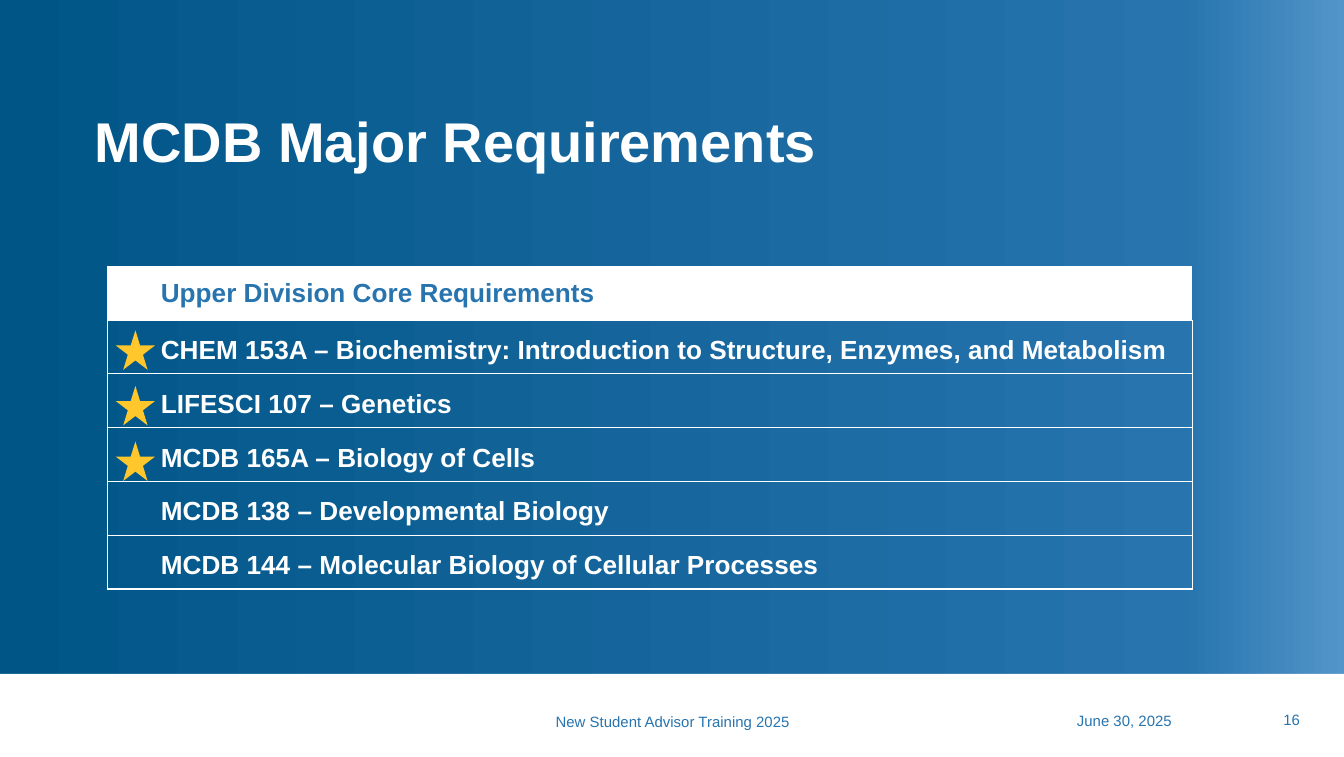
from copy import deepcopy
from dataclasses import dataclass

from lxml.etree import SubElement
from pptx import Presentation
from pptx.dml.color import RGBColor
from pptx.enum.shapes import MSO_SHAPE
from pptx.enum.text import MSO_ANCHOR, PP_ALIGN
from pptx.oxml.ns import qn
from pptx.util import Cm, Pt


@dataclass(frozen=True)
class Theme:
    font: str = "Arial"
    navy: str = "005587"
    blue: str = "2774AE"
    sky: str = "5295C9"
    white: str = "FFFFFF"
    gold: str = "FFC72B"
    title_size: float = 30
    table_size: float = 14
    footer_size: float = 8


def rgb(color):
    return RGBColor.from_string(color)


def write(tf, text, font, size, color, bold=False, align=PP_ALIGN.LEFT,
          line_spacing=None):
    p = tf.paragraphs[0]
    p.alignment = align
    if line_spacing:
        p.line_spacing = line_spacing
    r = p.add_run()
    r.text = text
    r.font.name = font
    r.font.size = Pt(size)
    r.font.bold = bold
    r.font.color.rgb = rgb(color)


def add_border(cell, side, color, width=0.5):
    ln = SubElement(cell._tc.get_or_add_tcPr(), qn(f"a:ln{side}"), w=str(Pt(width)))
    fill = SubElement(ln, qn("a:solidFill"))
    SubElement(fill, qn("a:srgbClr"), val=color)


class SlideBuilder:
    def __init__(self, s, theme):
        self.s = s
        self.theme = theme

    def background(self, stops):
        fill = self.s.background.fill
        fill.gradient()
        fill.gradient_angle = 0
        gs_list = self.s.element.find(f".//{qn('a:gsLst')}")
        while len(gs_list) < len(stops):
            gs_list.append(deepcopy(gs_list[0]))
        for stop, (position, color) in zip(fill.gradient_stops, stops):
            stop.position = position
            stop.color.rgb = rgb(color)

    def shape(self, kind, x, y, w, h, color, outlined=False):
        sp = self.s.shapes.add_shape(kind, Cm(x), Cm(y), Cm(w), Cm(h))
        sp.shadow.inherit = False
        sp.fill.solid()
        sp.fill.fore_color.rgb = rgb(color)
        if outlined:
            sp.line.color.rgb = rgb(color)
            sp.line.width = Pt(1)
            # Sharp corners on the outline
            ln = sp.element.spPr.find(qn("a:ln"))
            SubElement(ln, qn("a:miter"), lim="800000")
        else:
            sp.line.fill.background()

    def text(self, text, x, y, w, h, margins=(0.25, 0.13, 0.25, 0.13),
             anchor=MSO_ANCHOR.TOP, **fmt):
        tf = self.s.shapes.add_textbox(Cm(x), Cm(y), Cm(w), Cm(h)).text_frame
        tf.word_wrap = True
        tf.vertical_anchor = anchor
        (tf.margin_left, tf.margin_top,
         tf.margin_right, tf.margin_bottom) = map(Cm, margins)
        write(tf, text, font=self.theme.font, **fmt)

    def footer(self, text, x, y, w, left=0.25, align=PP_ALIGN.RIGHT):
        self.text(text, x, y, w, 0.38, (left, 0.03, 0.25, 0.03),
                  MSO_ANCHOR.BOTTOM, size=self.theme.footer_size,
                  color=self.theme.blue, align=align)

    def table(self, rows, x, y, w, h):
        t = self.theme
        table = self.s.shapes.add_table(
            len(rows), 1, Cm(x), Cm(y), Cm(w), Cm(h)).table
        table.horz_banding = False
        for i, text in enumerate(rows):
            header, last = i == 0, i == len(rows) - 1
            cell = table.cell(i, 0)
            cell.vertical_anchor = MSO_ANCHOR.MIDDLE
            cell.margin_left = Cm(1.01)
            cell.margin_top = Cm(0 if header else 0.13)
            cell.margin_right = cell.margin_bottom = 0
            add_border(cell, "L", t.white)
            add_border(cell, "R", t.blue if header else t.white)
            add_border(cell, "T", t.white)
            add_border(cell, "B", t.white, 1 if last else 0.5)
            if header:
                cell.fill.solid()
                cell.fill.fore_color.rgb = rgb(t.white)
            else:
                cell.fill.background()
            write(cell.text_frame, text, t.font, t.table_size,
                  t.blue if header else t.white, bold=True)


def main():
    theme = Theme()
    prs = Presentation()
    prs.slide_width, prs.slide_height = Cm(25.4), Cm(14.3)
    s = prs.slides.add_slide(prs.slide_layouts[6])
    b = SlideBuilder(s, theme)

    # Background and footer band
    b.background([(0, theme.navy), (0.88, theme.blue), (1, theme.sky)])
    b.shape(MSO_SHAPE.RECTANGLE, 0, 12.73, 25.4, 1.57, theme.white)
    b.footer("New Student Advisor Training 2025", 10.5, 13.45, 4.75, left=0,
             align=PP_ALIGN.LEFT)
    b.footer("June 30, 2025", 18.59, 13.43, 3.81)
    b.footer("16", 22.61, 13.42, 2.21)

    # Title
    b.text("MCDB Major Requirements", 1.54, 2.03, 20.32, 1.42,
           size=theme.title_size, color=theme.white, bold=True, line_spacing=0.9)

    # Course table
    b.table([
        "Upper Division Core Requirements",
        "CHEM 153A – Biochemistry: Introduction to Structure, Enzymes, and Metabolism",
        "LIFESCI 107 – Genetics",
        "MCDB 165A – Biology of Cells",
        "MCDB 138 – Developmental Biology",
        "MCDB 144 – Molecular Biology of Cellular Processes",
    ], 2.03, 5.03, 20.5, 6.1)

    # Stars beside the first three courses
    for i in range(3):
        b.shape(MSO_SHAPE.STAR_5_POINT, 2.24, 6.3 + 1.05 * i, 0.64, 0.64,
                theme.gold, outlined=True)

    prs.save("out.pptx")


if __name__ == "__main__":
    main()
